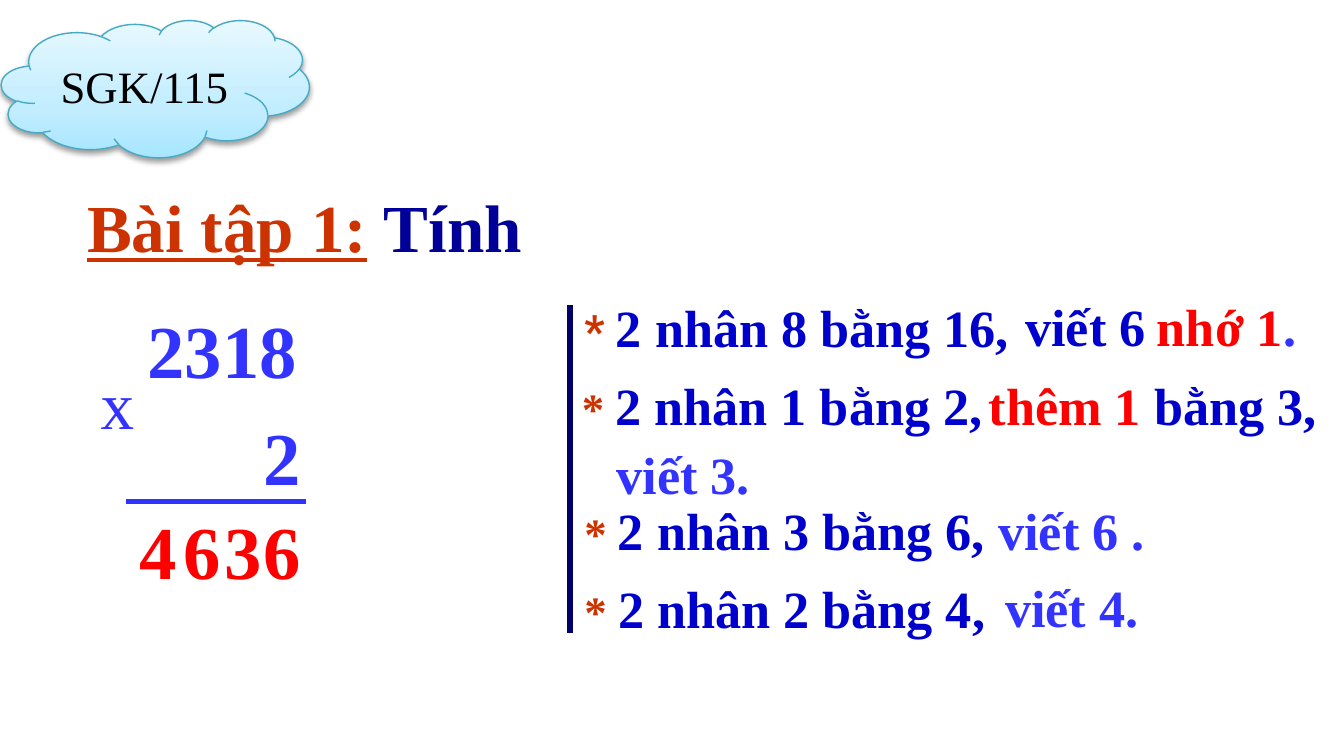
from dataclasses import dataclass

from lxml.etree import SubElement
from pptx import Presentation
from pptx.dml.color import RGBColor as RGB
from pptx.enum.shapes import MSO_CONNECTOR as CONN, MSO_SHAPE as SHAPE
from pptx.enum.text import MSO_ANCHOR as ANCHOR, MSO_AUTO_SIZE as AUTO, PP_ALIGN as ALIGN
from pptx.oxml import parse_xml
from pptx.oxml.ns import nsdecls, qn
from pptx.slide import Slide
from pptx.util import Pt


@dataclass(frozen=True)
class Theme:
    font: str = "Times New Roman"
    star_font: str = "Roboto"
    navy: str = "000066"
    title: str = "000099"
    blue: str = "0000CC"
    bright: str = "3333FF"
    rust: str = "CC3300"
    red: str = "FF0000"
    black: str = "000000"
    cloud_line: str = "46AAC5"
    cloud_stops: tuple = ((0, "A7E6FF"), (35, "C1EDFF"), (100, "E7F8FF"))
    small: float = 24
    body: float = 28
    heading: float = 36
    digit: float = 40


T = Theme()


@dataclass(frozen=True)
class Run:
    text: str
    color: str
    size: float = T.body
    font: str = T.font
    bold: bool = True
    underline: bool = False


@dataclass(frozen=True)
class Label:
    x: float
    y: float
    w: float
    h: float
    runs: tuple[Run, ...]
    align: ALIGN = ALIGN.LEFT


@dataclass(frozen=True)
class Rule:
    x1: float
    y1: float
    x2: float
    y2: float
    color: str


def add_runs(p, runs: tuple[Run, ...]) -> None:
    for run in runs:
        r = p.add_run()
        r.text = run.text
        f = r.font
        f.name, f.size, f.bold = run.font, Pt(run.size), run.bold
        f.underline = run.underline
        f.color.rgb = RGB.from_string(run.color)


def draw_label(s: Slide, label: Label) -> None:
    tf = s.shapes.add_textbox(Pt(label.x), Pt(label.y), Pt(label.w), Pt(label.h)).text_frame
    tf.word_wrap = True
    tf.auto_size = AUTO.SHAPE_TO_FIT_TEXT
    p = tf.paragraphs[0]
    p.alignment = label.align
    add_runs(p, label.runs)


def draw_rule(s: Slide, rule: Rule) -> None:
    c = s.shapes.add_connector(CONN.STRAIGHT, Pt(rule.x1), Pt(rule.y1), Pt(rule.x2), Pt(rule.y2))
    c.line.color.rgb = RGB.from_string(rule.color)
    c.line.width = Pt(3)
    SubElement(c._element.spPr, qn("a:effectLst"))


def draw_cloud(s: Slide) -> None:
    sp = s.shapes.add_shape(SHAPE.CLOUD, Pt(0.7), Pt(10.8), Pt(165), Pt(73.5))
    sp.line.color.rgb = RGB.from_string(T.cloud_line)
    sp.line.width = Pt(0.75)
    stops = "".join(
        f'<a:gs pos="{pos * 1000}"><a:srgbClr val="{color}"/></a:gs>' for pos, color in T.cloud_stops
    )
    ns = nsdecls("a")
    sp_pr = sp._element.spPr
    sp_pr.find(qn("a:ln")).addprevious(parse_xml(
        f'<a:gradFill {ns} rotWithShape="1"><a:gsLst>{stops}</a:gsLst>'
        '<a:lin ang="16200000" scaled="1"/></a:gradFill>'
    ))
    sp_pr.append(parse_xml(
        f'<a:effectLst {ns}><a:outerShdw blurRad="{Pt(3.1)}" dist="{Pt(1.6)}" dir="5400000" '
        f'rotWithShape="0"><a:srgbClr val="{T.black}"><a:alpha val="38000"/></a:srgbClr>'
        "</a:outerShdw></a:effectLst>"
    ))
    tf = sp.text_frame
    tf.vertical_anchor = ANCHOR.MIDDLE
    p = tf.paragraphs[0]
    p.alignment = ALIGN.CENTER
    add_runs(p, (Run("SGK/115", T.black, T.small, bold=False),))


def step(x: float, y: float, w: float, text: str, star_font: str = T.font) -> Label:
    return Label(x, y, w, 41, (Run("* ", T.rust, T.small, star_font), Run(text, T.blue)))


def note(x: float, y: float, w: float, *runs: Run) -> Label:
    return Label(x, y, w, 41, runs)


def number(x: float, y: float, w: float, text: str, color: str) -> Label:
    return Label(x, y, w, 55.4, (Run(text, color, T.digit),))


RULES = (
    Rule(305.3, 163.4, 305.3, 339.1, T.navy),
    Rule(67.7, 268.6, 164.2, 268.6, T.bright),
)
LABELS = (
    step(306, 154.8, 270, "2 nhân 8 bằng 16,", T.star_font),
    step(304.6, 196.6, 231.1, "2 nhân 1 bằng 2,"),
    step(306, 263.5, 252, "2 nhân 3 bằng 6,"),
    step(306, 305.3, 229.7, "2 nhân 2 bằng 4,"),
    number(72, 159.1, 131.8, "2318", T.bright),
    number(133.9, 216.7, 95.8, "2", T.bright),
    Label(46.8, 190.8, 36, 51.1, (Run("x", T.bright, T.heading, bold=False),)),
    *(number(x, 267.1, 30, d, T.red) for x, d in zip((67.7, 91.4, 113, 133.9), "4636")),
    note(612.7, 154.1, 90, Run("nhớ 1", T.red), Run(".", T.bright)),
    note(542.2, 154.1, 90.7, Run("viết 6", T.blue)),
    note(522.7, 196.6, 197.3, Run("thêm 1 ", T.red), Run("bằng 3,", T.blue)),
    note(323.3, 233.3, 91.4, Run("viết 3.", T.bright)),
    note(527.8, 263.5, 103, Run("viết 6 .", T.bright)),
    note(531.4, 304.6, 90, Run("viết 4.", T.bright)),
    Label(39.6, 95.8, 642.2, 51.1, (
        Run("Bài tập 1:", T.rust, T.heading, underline=True),
        Run(" ", T.rust, T.heading),
        Run("Tính", T.title, T.heading),
    ), ALIGN.JUSTIFY),
)


def main() -> None:
    prs = Presentation()
    prs.slide_width, prs.slide_height = Pt(720), Pt(405)
    s = prs.slides.add_slide(prs.slide_layouts[6])
    for rule in RULES:
        draw_rule(s, rule)
    for label in LABELS:
        draw_label(s, label)
    draw_cloud(s)
    prs.save("out.pptx")


if __name__ == "__main__":
    main()
